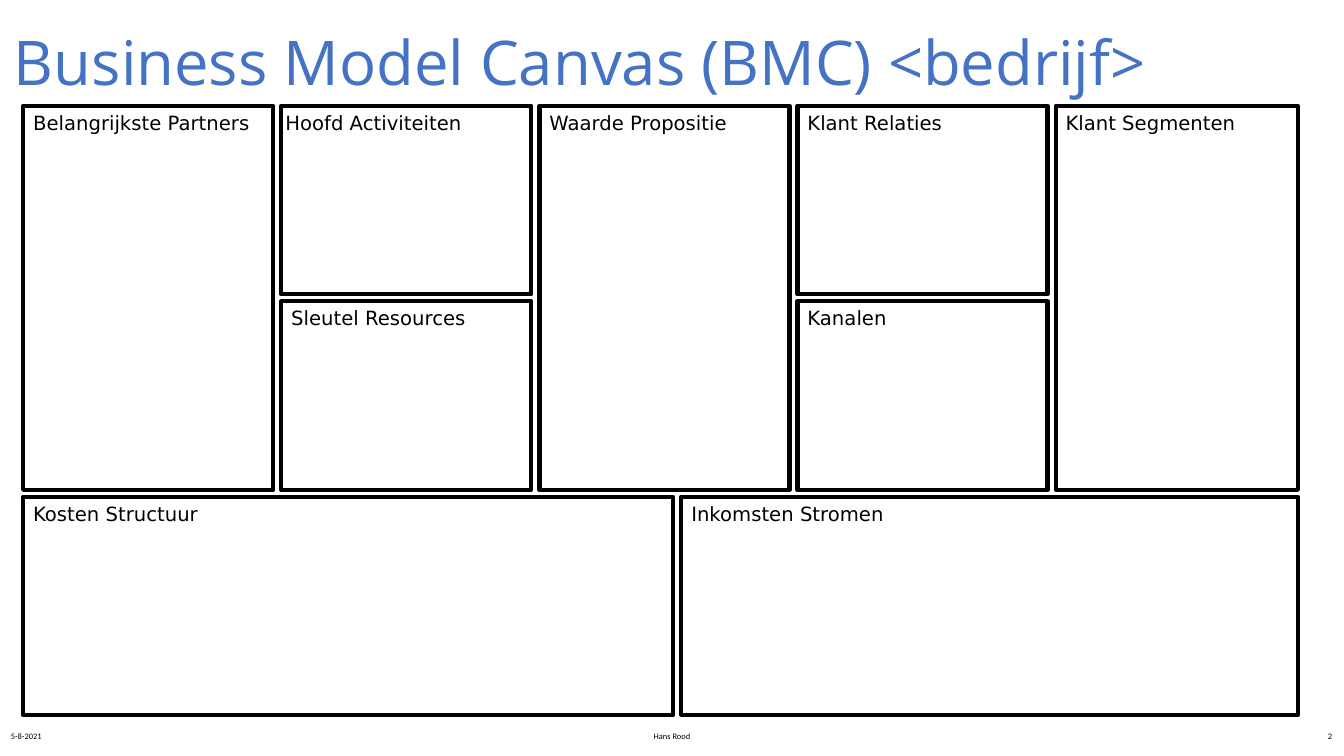
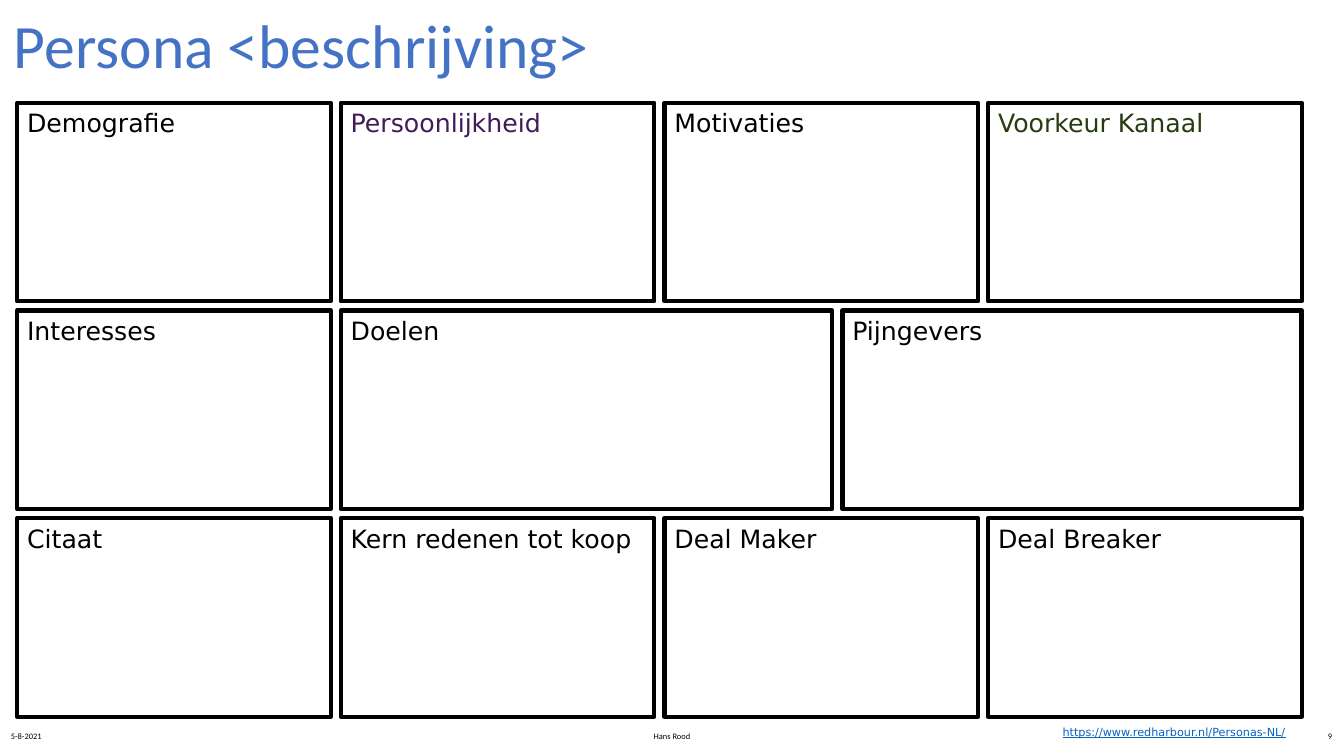
import dataclasses

import pptx
import pptx.dml.color
import pptx.enum.shapes
import pptx.enum.text
import pptx.util

RGBColor = pptx.dml.color.RGBColor
ALIGN = pptx.enum.text.PP_ALIGN
ANCHOR = pptx.enum.text.MSO_ANCHOR
Inches = pptx.util.Inches
Pt = pptx.util.Pt

BLACK = RGBColor(0x00, 0x00, 0x00)
WHITE = RGBColor(0xFF, 0xFF, 0xFF)
TITLE_BLUE = RGBColor(0x44, 0x72, 0xC4)
PURPLE = RGBColor(0x40, 0x1C, 0x58)
GREEN = RGBColor(0x27, 0x3C, 0x10)
LINK_BLUE = RGBColor(0x05, 0x63, 0xC1)

BODY_FONT = "DejaVu Sans"
FOOTER_FONT = "Calibri"
SLIDE_W, SLIDE_H = 13.33, 7.5


@dataclasses.dataclass
class Grid:
    left: float
    top: float
    col_pitch: float
    row_pitch: float
    col_gap: float
    row_gap: float
    size: int

    def cell(self, col, row, cols, rows):
        return (self.left + col * self.col_pitch,
                self.top + row * self.row_pitch,
                cols * self.col_pitch - self.col_gap,
                rows * self.row_pitch - self.row_gap)


BMC_GRID = Grid(0.23, 1.05, 2.56, 1.94, 0.08, 0.07, 14)
PERSONA_GRID = Grid(0.17, 1.02, 3.21, 2.06, 0.1, 0.09, 18)

BMC_BLOCKS = [
    ("Belangrijkste Partners", 0, 0, 1, 2),
    ("Hoofd Activiteiten", 1, 0, 1, 1, BLACK, 0.04),
    ("Sleutel Resources", 1, 1, 1, 1),
    ("Waarde Propositie", 2, 0, 1, 2),
    ("Klant Relaties", 3, 0, 1, 1),
    ("Kanalen", 3, 1, 1, 1),
    ("Klant Segmenten", 4, 0, 0.97, 2),
    ("Kosten Structuur", 0, 2, 2.55, 1.15),
    ("Inkomsten Stromen", 2.55, 2, 2.42, 1.15),
]

PERSONA_BLOCKS = [
    ("Demografie", 0, 0, 1, 1),
    ("Persoonlijkheid", 1, 0, 1, 1, PURPLE),
    ("Motivaties", 2, 0, 1, 1),
    ("Voorkeur Kanaal", 3, 0, 1, 1, GREEN),
    ("Interesses", 0, 1, 1, 1),
    ("Doelen", 1, 1, 1.55, 1),
    ("Pijngevers", 2.55, 1, 1.45, 1),
    ("Citaat", 0, 2, 1, 1),
    ("Kern redenen tot koop", 1, 2, 1, 1),
    ("Deal Maker", 2, 2, 1, 1),
    ("Deal Breaker", 3, 2, 1, 1),
]


def write(sp, text, size, font, color, align=ALIGN.LEFT, anchor=ANCHOR.TOP):
    tf = sp.text_frame
    tf.word_wrap = True
    tf.vertical_anchor = anchor
    p = tf.paragraphs[0]
    p.alignment = align
    r = p.add_run()
    r.text = text
    r.font.size = Pt(size)
    r.font.name = font
    r.font.color.rgb = color
    return p


def add_text(s, box, *args, **kwargs):
    sp = s.shapes.add_textbox(*map(Inches, box))
    return write(sp, *args, **kwargs)


def add_title(s, text, font, height):
    p = add_text(s, (0.04, 0.05, 0.89 * SLIDE_W, height), text, 44, font,
                 TITLE_BLUE, anchor=ANCHOR.MIDDLE)
    p.line_spacing = 0.9


def add_footer(s, number):
    parts = [
        ("5-8-2021", 0.01, 3, ALIGN.LEFT),
        ("Hans Rood", (SLIDE_W - 4.5) / 2, 4.5, ALIGN.CENTER),
        (number, SLIDE_W - 3.02, 3, ALIGN.RIGHT),
    ]
    for text, left, width, align in parts:
        add_text(s, (left, SLIDE_H - 0.4, width, 0.4), text, 6, FOOTER_FONT,
                 BLACK, align=align, anchor=ANCHOR.MIDDLE)


def add_block(s, grid, text, col, row, cols, rows, color=BLACK, inset=0.1):
    sp = s.shapes.add_shape(pptx.enum.shapes.MSO_SHAPE.RECTANGLE,
                            *map(Inches, grid.cell(col, row, cols, rows)))
    sp.shadow.inherit = False
    sp.fill.solid()
    sp.fill.fore_color.rgb = WHITE
    sp.line.color.rgb = BLACK
    sp.line.width = Pt(3)
    sp.text_frame.margin_left = sp.text_frame.margin_right = Inches(inset)
    write(sp, text, grid.size, BODY_FONT, color)


def add_canvas(prs, title, font, title_height, number, grid, blocks):
    s = prs.slides.add_slide(prs.slide_layouts[6])
    add_footer(s, number)
    add_title(s, title, font, title_height)
    for block in blocks:
        add_block(s, grid, *block)
    return s


def main():
    prs = pptx.Presentation()
    prs.slide_width = Inches(SLIDE_W)
    prs.slide_height = Inches(SLIDE_H)
    add_canvas(prs, "Business Model Canvas (BMC) <bedrijf>", "Open Sans",
               1.2, "2", BMC_GRID, BMC_BLOCKS)
    s = add_canvas(prs, "Persona <beschrijving>", "Calibri",
                   0.87, "9", PERSONA_GRID, PERSONA_BLOCKS)
    p = add_text(s, (10.44, 7.15, 2.51, 0.24),
                 "https://www.redharbour.nl/Personas-NL/", 8, BODY_FONT,
                 LINK_BLUE)
    p.runs[0].font.underline = True
    prs.save("out.pptx")


if __name__ == "__main__":
    main()
